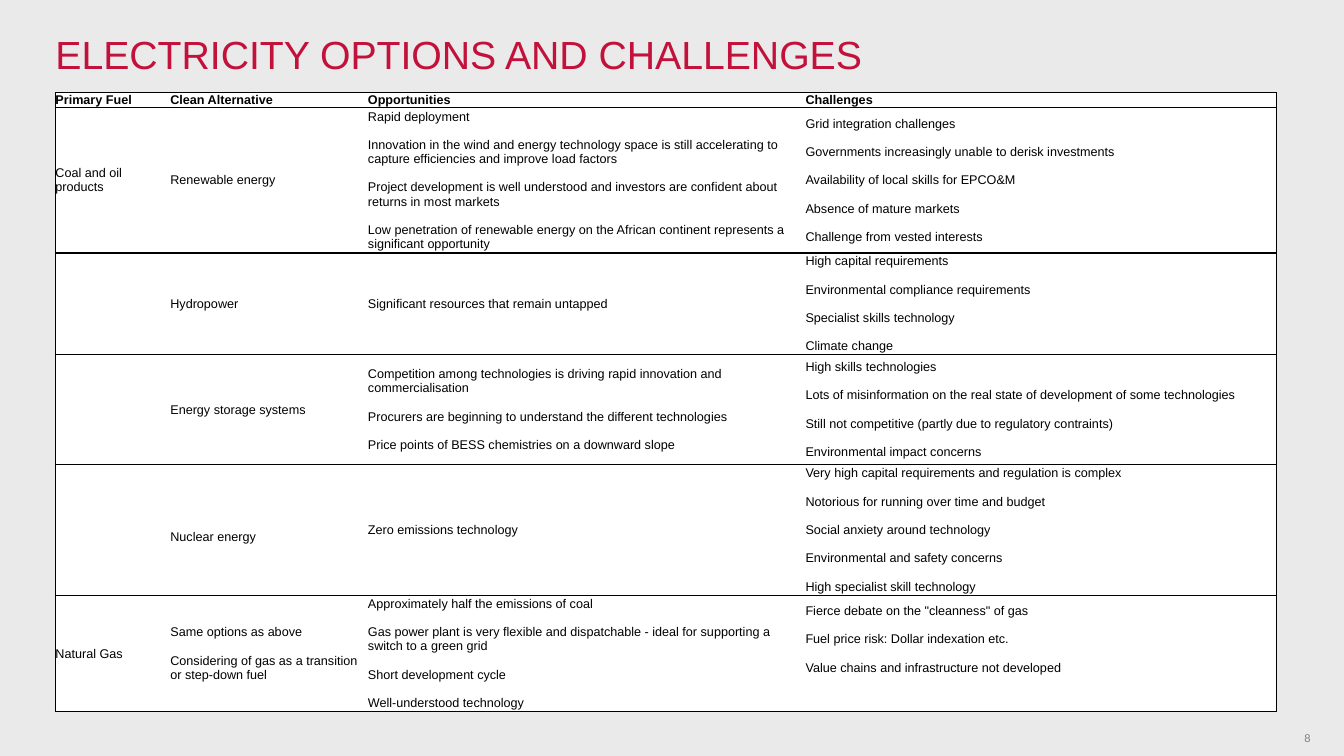
from lxml.etree import SubElement
from pptx import Presentation
from pptx.dml.color import RGBColor
from pptx.enum.text import MSO_ANCHOR, PP_ALIGN
from pptx.oxml.ns import qn
from pptx.util import Inches, Pt

COLORS = {
    "background": "EAEAEA",
    "title": "C2113A",
    "text": "000000",
    "line": "000000",
    "cell": "FFFFFF",
    "number": "808080",
}
SLIDE_WIDTH, SLIDE_HEIGHT = 13.33, 7.5
MARGIN = 0.55
TABLE_TOP = 0.92
COLUMN_WIDTHS = [1.14, 1.96, 4.34, 4.67]
ROW_HEIGHTS = [0.15, 1.44, 1.01, 1.09, 1.3, 1.15]
LINE_HEIGHT = 0.14
PARAGRAPH_GAP = 10.2

# One tuple per row; each line of a cell is a paragraph.
ROWS = [
    ("Primary Fuel", "Clean Alternative", "Opportunities", "Challenges"),
    (
        "Coal and oil\nproducts",
        "Renewable energy",
        "Rapid deployment\n"
        "Innovation in the wind and energy technology space is still accelerating to "
        "capture efficiencies and improve load factors\n"
        "Project development is well understood and investors are confident about "
        "returns in most markets\n"
        "Low penetration of renewable energy on the African continent represents a "
        "significant opportunity",
        "Grid integration challenges\n"
        "Governments increasingly unable to derisk investments\n"
        "Availability of local skills for EPCO&M\n"
        "Absence of mature markets\n"
        "Challenge from vested interests",
    ),
    (
        "",
        "Hydropower",
        "Significant resources that remain untapped",
        "High capital requirements\n"
        "Environmental compliance requirements\n"
        "Specialist skills technology\n"
        "Climate change",
    ),
    (
        "",
        "Energy storage systems",
        "Competition among technologies is driving rapid innovation and commercialisation\n"
        "Procurers are beginning to understand the different technologies\n"
        "Price points of BESS chemistries on a downward slope",
        "High skills technologies\n"
        "Lots of misinformation on the real state of development of some technologies\n"
        "Still not competitive (partly due to regulatory contraints)\n"
        "Environmental impact concerns",
    ),
    (
        "",
        "Nuclear energy",
        "Zero emissions technology",
        "Very high capital requirements and regulation is complex\n"
        "Notorious for running over time and budget\n"
        "Social anxiety around technology\n"
        "Environmental and safety concerns\n"
        "High specialist skill technology",
    ),
    (
        "Natural Gas",
        "Same options as above\n"
        "Considering of gas as a transition or step-down fuel",
        "Approximately half the emissions of coal\n"
        "Gas power plant is very flexible and dispatchable - ideal for supporting a "
        "switch to a green grid\n"
        "Short development cycle\n"
        "Well-understood technology",
        'Fierce debate on the "cleanness" of gas\n'
        "Fuel price risk: Dollar indexation etc.\n"
        "Value chains and infrastructure not developed",
    ),
]
# Cells whose text sits off centre: (row, column) to margins.
CELL_MARGINS = {
    (4, 1): {"margin_top": LINE_HEIGHT},
    (5, 3): {"margin_bottom": 2 * LINE_HEIGHT},
}


def rgb(name):
    return RGBColor.from_string(COLORS[name])


def set_margins(target, **margins):
    """Set all four margins in inches; those not given are zero."""
    for side in ("margin_left", "margin_top", "margin_right", "margin_bottom"):
        setattr(target, side, Inches(margins.get(side, 0)))


def format_font(paragraph, size, color, bold=False):
    for name, value in {"name": "Arial", "size": Pt(size), "bold": bold}.items():
        setattr(paragraph.font, name, value)
    paragraph.font.color.rgb = rgb(color)


def set_borders(cell, visible_sides):
    properties = cell._tc.get_or_add_tcPr()
    for side in "LRTB":
        line = SubElement(properties, qn(f"a:ln{side}"), w=str(Pt(1)))
        if side in visible_sides:
            fill = SubElement(line, qn("a:solidFill"))
            SubElement(fill, qn("a:srgbClr"), val=COLORS["line"])
        else:
            SubElement(line, qn("a:noFill"))


def fill_cell(cell, text, gap, bold, margins):
    cell.vertical_anchor = MSO_ANCHOR.MIDDLE
    set_margins(cell, **margins)
    cell.fill.solid()
    cell.fill.fore_color.rgb = rgb("cell")
    cell.text_frame.text = text
    for index, paragraph in enumerate(cell.text_frame.paragraphs):
        paragraph.space_before = Pt(gap if index else 0)
        format_font(paragraph, 9, "text", bold)


def add_options_table(slide):
    frame = slide.shapes.add_table(
        len(ROWS), len(COLUMN_WIDTHS), Inches(MARGIN), Inches(TABLE_TOP),
        Inches(sum(COLUMN_WIDTHS)), Inches(sum(ROW_HEIGHTS)),
    )
    table = frame.table
    table.first_row = table.horz_banding = False
    for column, width in zip(table.columns, COLUMN_WIDTHS):
        column.width = Inches(width)
    for row, height in zip(table.rows, ROW_HEIGHTS):
        row.height = Inches(height)
    outer_sides = {0: "L", len(COLUMN_WIDTHS) - 1: "R"}
    for row_index, texts in enumerate(ROWS):
        for column_index, text in enumerate(texts):
            cell = table.cell(row_index, column_index)
            set_borders(cell, "TB" + outer_sides.get(column_index, ""))
            gap = PARAGRAPH_GAP if column_index else 0
            margins = CELL_MARGINS.get((row_index, column_index), {})
            fill_cell(cell, text, gap, row_index == 0, margins)


def add_title(slide, text):
    title = slide.shapes.title
    title.left, title.top = Inches(MARGIN), Inches(0.35)
    title.width, title.height = Inches(12.24), Inches(0.37)
    frame = title.text_frame
    set_margins(frame)
    frame.vertical_anchor = MSO_ANCHOR.TOP
    frame.text = text
    paragraph = frame.paragraphs[0]
    paragraph.alignment = PP_ALIGN.LEFT
    paragraph.line_spacing = 0.9
    format_font(paragraph, 28, "title")


def add_page_number(slide, text):
    box = slide.shapes.add_textbox(
        Inches(SLIDE_WIDTH - 0.47), Inches(SLIDE_HEIGHT - 0.24), Inches(0.14), Inches(0.13)
    )
    frame = box.text_frame
    set_margins(frame)
    frame.vertical_anchor = MSO_ANCHOR.MIDDLE
    frame.text = text
    frame.paragraphs[0].alignment = PP_ALIGN.RIGHT
    format_font(frame.paragraphs[0], 8, "number")


def main():
    presentation = Presentation()
    presentation.slide_width = Inches(SLIDE_WIDTH)
    presentation.slide_height = Inches(SLIDE_HEIGHT)
    slide = presentation.slides.add_slide(presentation.slide_layouts[5])
    slide.background.fill.solid()
    slide.background.fill.fore_color.rgb = rgb("background")
    add_title(slide, "ELECTRICITY OPTIONS AND CHALLENGES")
    add_options_table(slide)
    add_page_number(slide, "8")
    presentation.save("out.pptx")


if __name__ == "__main__":
    main()
